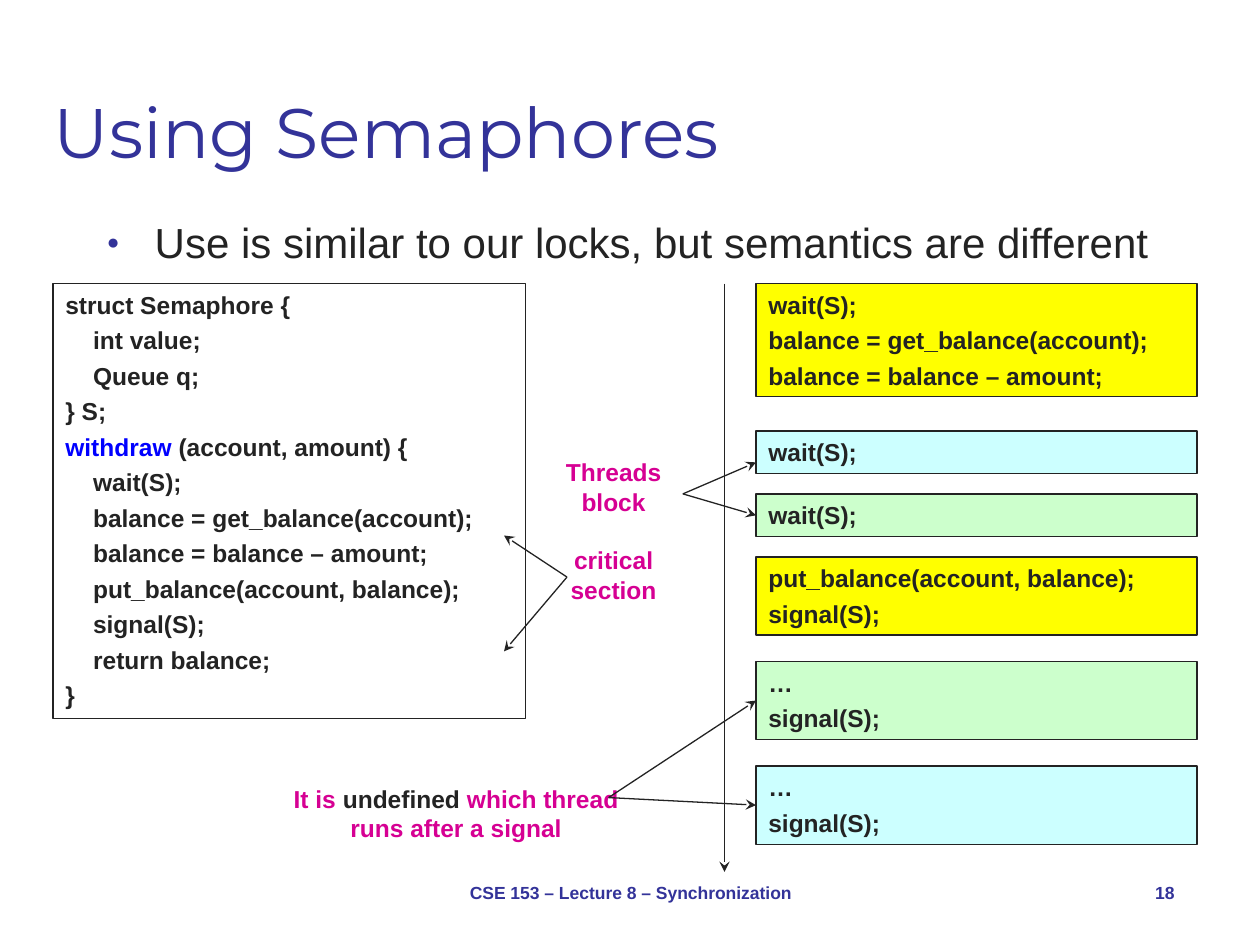
from lxml.etree import SubElement
from pptx import Presentation
from pptx.dml.color import RGBColor
from pptx.enum.shapes import MSO_CONNECTOR as Connector, MSO_SHAPE as Shape
from pptx.enum.text import MSO_ANCHOR as Anchor, PP_ALIGN as Align
from pptx.oxml.ns import qn
from pptx.util import Inches, Pt

COLORS = {
    "ink": "232323", "navy": "333399", "pink": "D60093", "keyword": "0000FF",
    "yellow": "FFFF00", "green": "CCFFCC", "cyan": "CCFFFF",
}
CODE = [
    (0, "struct Semaphore {"),
    (1, "int value;"),
    (1, "Queue q;"),
    (0, "} S;"),
    (0, [("withdraw", "keyword"), (" (account, amount) {", "ink")]),
    (1, "wait(S);"),
    (1, "balance = get_balance(account);"),
    (1, "balance = balance – amount;"),
    (1, "put_balance(account, balance);"),
    (1, "signal(S);"),
    (1, "return balance;"),
    (0, "}"),
]
STEPS = [
    (2.25, 0.9, "yellow", ["wait(S);", "balance = get_balance(account);", "balance = balance – amount;"]),
    (3.42, 0.34, "cyan", ["wait(S);"]),
    (3.92, 0.34, "green", ["wait(S);"]),
    (4.42, 0.62, "yellow", ["put_balance(account, balance);", "signal(S);"]),
    (5.25, 0.62, "green", ["…", "signal(S);"]),
    (6.08, 0.62, "cyan", ["…", "signal(S);"]),
]


def rgb(name):
    """Return the named colour."""
    return RGBColor.from_string(COLORS[name])


def write(paragraph, text, size=14, font="Arial", color="ink", bold=True,
          align=Align.LEFT, before=0, indent=0, hanging=0):
    """Write a string, or a list of (string, colour) spans, into a paragraph."""
    paragraph.alignment = align
    paragraph.space_before = Pt(before)
    properties = paragraph._p.get_or_add_pPr()
    properties.set("marL", str(Inches(indent)))
    properties.set("indent", str(Inches(-hanging)))
    for words, tone in [(text, color)] if isinstance(text, str) else text:
        run = paragraph.add_run()
        run.text = words
        run.font.size, run.font.name, run.font.bold = Pt(size), font, bold
        run.font.color.rgb = rgb(tone)


def add_text(slide, box, text, anchor=Anchor.TOP, wrap=True, **style):
    """Add a text box with one paragraph and return the paragraph."""
    frame = slide.shapes.add_textbox(*map(Inches, box)).text_frame
    frame.word_wrap, frame.vertical_anchor = wrap, anchor
    write(frame.paragraphs[0], text, **style)
    return frame.paragraphs[0]


def add_code(slide, box, lines, fill=None):
    """Add an outlined box of (level, text) code lines."""
    shape = slide.shapes.add_shape(Shape.RECTANGLE, *map(Inches, box))
    shape.shadow.inherit = False
    if fill:
        shape.fill.solid()
        shape.fill.fore_color.rgb = rgb(fill)
    else:
        shape.fill.background()
    shape.line.color.rgb, shape.line.width = rgb("ink"), Pt(0.75)
    frame = shape.text_frame
    frame.word_wrap, frame.vertical_anchor = True, Anchor.TOP
    for index, (level, text) in enumerate(lines):
        paragraph = frame.add_paragraph() if index else frame.paragraphs[0]
        write(paragraph, text, before=3.5, indent=0.22 * level)
    return shape


def add_arrow(slide, start, end, target=None):
    """Draw an arrow, joined to the left side of a target if one is given."""
    arrow = slide.shapes.add_connector(Connector.STRAIGHT, *map(Inches, start + end))
    arrow.line.color.rgb, arrow.line.width = rgb("ink"), Pt(0.75)
    SubElement(arrow.line._get_or_add_ln(), qn("a:tailEnd"), type="stealth")
    SubElement(arrow._element.spPr, qn("a:effectLst"))
    if target is not None:
        arrow.end_connect(target, 1)


def add_heading(slide, left, top, width):
    """Place the title and the bulleted statement."""
    add_text(slide, (left, top, width, 1.25), "Using Semaphores", anchor=Anchor.BOTTOM,
             size=40, font="Montserrat", color="navy", bold=False)
    paragraph = add_text(slide, (left + 0.42, top + 1.5, 8.67, 0.75),
                         "Use is similar to our locks, but semantics are different",
                         size=24, bold=False, before=5, indent=0.38, hanging=0.38)
    properties = paragraph._p.get_or_add_pPr()
    bullet_color = SubElement(properties, qn("a:buClr"))
    SubElement(bullet_color, qn("a:srgbClr"), val=COLORS["navy"])
    SubElement(properties, qn("a:buSzPct"), val="50000")
    SubElement(properties, qn("a:buFont"), typeface="Arial")
    SubElement(properties, qn("a:buChar"), char="●")


def add_timeline(slide, left, top, width, height):
    """Place the time arrow and the steps of the three threads."""
    add_arrow(slide, (left, top), (left, top + height))
    return [add_code(slide, (left + 0.25, step_top, width - 0.25, step_height),
                     [(0, line) for line in lines], fill)
            for step_top, step_height, fill, lines in STEPS]


def add_notes(slide, steps):
    """Place the pink remarks and their arrows."""
    remarks = [
        ((4.33, 3.58, 1.08, 0.57), "Threads block"),
        ((4.33, 4.28, 1.08, 0.57), "critical section"),
        ((2.08, 6.17, 3.08, 0.57), [("It is ", "pink"), ("undefined", "ink"),
                                    (" which thread runs after a signal", "pink")]),
    ]
    for box, text in remarks:
        add_text(slide, box, text, color="pink", align=Align.CENTER)
    blocked, critical, undefined = (5.42, 3.92), (4.5, 4.58), (4.83, 6.33)
    add_arrow(slide, blocked, (6, 3.67))
    add_arrow(slide, blocked, (6, 4.09), steps[2])
    add_arrow(slide, critical, (4, 4.25))
    add_arrow(slide, critical, (4, 5.17))
    add_arrow(slide, undefined, (6, 5.56), steps[4])
    add_arrow(slide, undefined, (6, 6.39), steps[5])


def add_footer(slide, top, height):
    """Place the lecture name and the slide number."""
    style = dict(anchor=Anchor.MIDDLE, size=10, color="navy")
    add_text(slide, (3.42, top, 3.17, height), "CSE 153 – Lecture 8 – Synchronization",
             align=Align.CENTER, **style)
    add_text(slide, (8.75, top, 0.67, height), "18", align=Align.RIGHT, **style)


def main():
    """Build and save the slide."""
    presentation = Presentation()
    presentation.slide_width, presentation.slide_height = Inches(10), Inches(7.5)
    slide = presentation.slides.add_slide(presentation.slide_layouts[6])
    add_heading(slide, 0.33, 0.17, 9.33)
    add_code(slide, (0.42, 2.25, 3.75, 3.45), CODE)
    steps = add_timeline(slide, 5.75, 2.25, 3.75, 4.67)
    add_notes(slide, steps)
    add_footer(slide, 6.83, 0.5)
    presentation.save("out.pptx")


if __name__ == "__main__":
    main()
